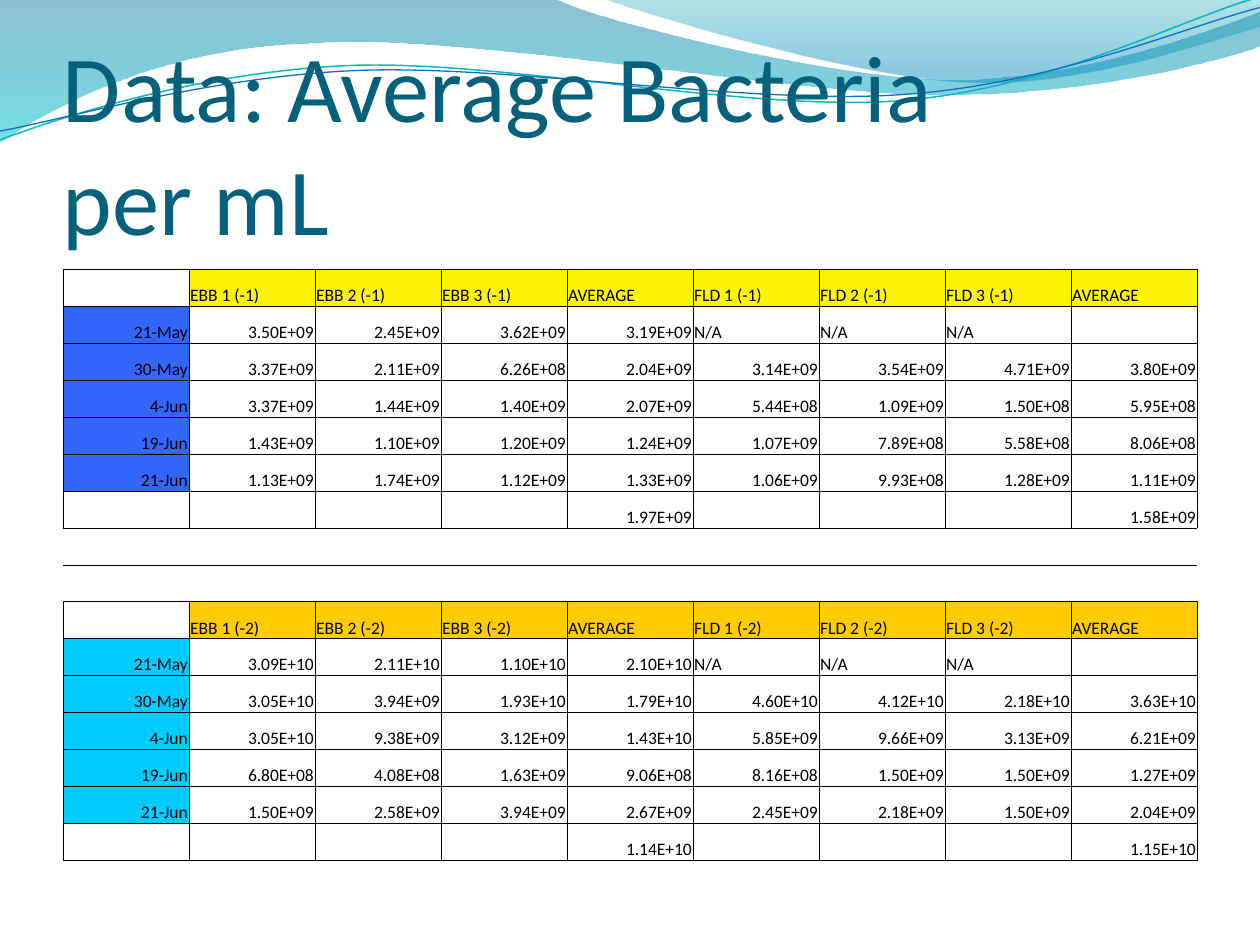
from math import cos, radians, sin

from lxml import etree
from pptx import Presentation
from pptx.dml.color import RGBColor
from pptx.enum.text import MSO_ANCHOR, PP_ALIGN
from pptx.oxml.ns import qn
from pptx.util import Inches, Pt

LEFT, RIGHT = PP_ALIGN.LEFT, PP_ALIGN.RIGHT
LOW = MSO_ANCHOR.BOTTOM
FONT = "Calibri"
PLAIN = "{2D5ABB26-0587-4C30-8999-92F81FD0307C}"
WIDE, HIGH = 10, 7.5
TILT = 2.7

HUES = {
    "title": "04617B", "ink": "000000",
    "sea": "0074A1", "aqua": "00C6CF", "teal": "00A1A9", "sky": "008BBF",
    "cyan": "0AB8BF", "blue": "0F6FC6",
}

TITLE = "Data: Average Bacteria per mL"
DATES = ["21-May", "30-May", "4-Jun", "19-Jun", "21-Jun"]
SITES = ["EBB", "FLD"]

BLOCKS = [
    {"tag": "(-1)", "head": "FCF305", "side": "3366FF", "rows": [
        "3.50E+09 2.45E+09 3.62E+09 3.19E+09 N/A N/A N/A",
        "3.37E+09 2.11E+09 6.26E+08 2.04E+09 3.14E+09 3.54E+09 4.71E+09 3.80E+09",
        "3.37E+09 1.44E+09 1.40E+09 2.07E+09 5.44E+08 1.09E+09 1.50E+08 5.95E+08",
        "1.43E+09 1.10E+09 1.20E+09 1.24E+09 1.07E+09 7.89E+08 5.58E+08 8.06E+08",
        "1.13E+09 1.74E+09 1.12E+09 1.33E+09 1.06E+09 9.93E+08 1.28E+09 1.11E+09",
    ], "means": ["1.97E+09", "1.58E+09"]},
    {"tag": "(-2)", "head": "FFCC00", "side": "00CCFF", "rows": [
        "3.09E+10 2.11E+10 1.10E+10 2.10E+10 N/A N/A N/A",
        "3.05E+10 3.94E+09 1.93E+10 1.79E+10 4.60E+10 4.12E+10 2.18E+10 3.63E+10",
        "3.05E+10 9.38E+09 3.12E+09 1.43E+10 5.85E+09 9.66E+09 3.13E+09 6.21E+09",
        "6.80E+08 4.08E+08 1.63E+09 9.06E+08 8.16E+08 1.50E+09 1.50E+09 1.27E+09",
        "1.50E+09 2.58E+09 3.94E+09 2.67E+09 2.45E+09 2.18E+09 1.50E+09 2.04E+09",
    ], "means": ["1.14E+10", "1.15E+10"]},
]

WAVES = [
    {"path": [(0, 0), (4.4, -0.01), (4.76, 0.17, 6.64, 0.63, 7.58, 0.63),
              (8.53, 0.63, 9.58, 0.26, 10, 0.09), (10.01, 0.36),
              (9.83, 0.44, 8.7, 0.76, 7.46, 0.75),
              (6.22, 0.75, 3.82, 0.28, 2.57, 0.34),
              (1.29, 0.36, 0.46, 0.83, -0.01, 1.13), (0, 0)],
     "fill": [(0, "sea", 45), (1, "aqua", 55)]},
    {"path": [(4.79, -0.01), (5.09, 0.11, 6.82, 0.62, 7.69, 0.65),
              (8.56, 0.69, 9.61, 0.32, 10, 0.21), (10, 0), (4.79, -0.01)],
     "fill": [(0, "teal", 30), (0.8, "sky", 45)]},
    {"path": [(0, 1.11), (0.48, 0.93, 1.58, 0.57, 2.77, 0.52),
              (3.95, 0.47, 5.93, 0.89, 7.13, 0.8),
              (8.33, 0.71, 9.38, 0.15, 9.98, -0.02)],
     "line": ("cyan", 0.85), "hub": (4.99, 0.58)},
    {"path": [(0, 1.04), (0.47, 0.96, 1.64, 0.61, 2.83, 0.56),
              (4.03, 0.51, 5.97, 0.84, 7.17, 0.75),
              (8.36, 0.67, 9.41, 0.21, 10, 0.06)],
     "line": ("blue", 0.75), "hub": (5, 0.59)},
]


def rgb(hue):
    return RGBColor.from_string(HUES.get(hue, hue))


def level(spot, hub):
    dx, dy = spot[0] - hub[0], spot[1] - hub[1]
    c, s = cos(radians(TILT)), sin(radians(TILT))
    return hub[0] + dx * c - dy * s, hub[1] + dx * s + dy * c


def bend(wave, path):
    lines = list(wave.element.iter(qn("a:lnTo")))
    for part in path[1:]:
        group, lines = lines[:len(part) // 2], lines[len(part) // 2:]
        if len(group) == 3:
            curve = etree.Element(qn("a:cubicBezTo"))
            group[0].addprevious(curve)
            for line in group:
                curve.append(line[0])
                line.getparent().remove(line)


def draw(slide, path, fill=None, line=None, hub=None):
    spots = [part[i:i + 2] for part in path for i in range(0, len(part), 2)]
    if hub:
        spots = [level(spot, hub) for spot in spots]
    spots = [(Inches(x), Inches(y)) for x, y in spots]
    pen = slide.shapes.build_freeform(*spots[0])
    pen.add_line_segments(spots[1:], close=fill is not None)
    wave = pen.convert_to_shape()
    bend(wave, path)
    wave.shadow.inherit = False
    if line:
        wave.rotation = 360 - TILT
        wave.fill.background()
        wave.line.color.rgb = rgb(line[0])
        wave.line.width = Pt(line[1])
        return
    wave.line.fill.background()
    wave.fill.gradient()
    wave.fill.gradient_angle = 270
    for stop, (spot, hue, _) in zip(wave.fill.gradient_stops, fill):
        stop.position = spot
        stop.color.rgb = rgb(hue)
    for node, (_, _, share) in zip(wave.element.iter(qn("a:srgbClr")), fill):
        etree.SubElement(node, qn("a:alpha"), val=str(share * 1000))


def put(host, frame, text, size=10, hue="ink", align=LEFT, pads=(0, 0, 0, 0)):
    host.margin_left, host.margin_top, host.margin_right, host.margin_bottom = map(Inches, pads)
    host.vertical_anchor = LOW
    para = frame.paragraphs[0]
    para.alignment = align
    if not text:
        etree.SubElement(para._p, qn("a:endParaRPr"), sz=str(size * 100))
        return
    run = para.add_run()
    run.text = text
    run.font.name = FONT
    run.font.size = Pt(size)
    run.font.color.rgb = rgb(hue)


def edge(cell, sides):
    props = cell._tc.get_or_add_tcPr()
    for spot, side in enumerate(sides):
        line = etree.Element(qn("a:ln" + side), w=str(Pt(0.5)))
        fill = etree.SubElement(line, qn("a:solidFill"))
        etree.SubElement(fill, qn("a:srgbClr"), val=HUES["ink"])
        props.insert(spot, line)


def expand(block):
    head = [""]
    for site in SITES:
        head += [f"{site} {n} {block['tag']}" for n in (1, 2, 3)] + ["AVERAGE"]
    body = [[date] + row.split() for date, row in zip(DATES, block["rows"])]
    foot = [""] * 4 + [block["means"][0]] + [""] * 3 + [block["means"][1]]
    rows = []
    for r, row in enumerate([head] + body + [foot]):
        row += [""] * (len(head) - len(row))
        rows.append([(text, "LRTB",
                      block["head"] if r == 0 and c else
                      block["side"] if c == 0 and 0 < r <= len(DATES) else None)
                     for c, text in enumerate(row)])
    return rows


def main():
    deck = Presentation()
    deck.slide_width, deck.slide_height = Inches(WIDE), Inches(HIGH)
    slide = deck.slides.add_slide(deck.slide_layouts[6])
    for wave in WAVES:
        draw(slide, **wave)

    side = WIDE * 0.05
    span = WIDE - 2 * side
    box = slide.shapes.add_textbox(*map(Inches, (side, 0.77, span, 1.25)))
    box.text_frame.word_wrap = True
    put(box.text_frame, box.text_frame, TITLE, size=54, hue="title", pads=(0, 0.05, 1.5, 0))

    first, last = map(expand, BLOCKS)
    gap = [[("", rim, None)] * len(first[0]) for rim in "TB"]
    grid = first + gap + last
    spot = map(Inches, (side, 2.14, span, 4.69))
    table = slide.shapes.add_table(len(grid), len(grid[0]), *spot).table
    table.first_row = table.horz_banding = False
    next(table._tbl.iter(qn("a:tableStyleId"))).text = PLAIN
    for r, row in enumerate(grid):
        for c, (text, rims, hue) in enumerate(row):
            cell = table.cell(r, c)
            put(cell, cell.text_frame, text, align=RIGHT if text[:1].isdigit() else LEFT,
                pads=(0.01, 0.01, 0.01, 0))
            if hue:
                cell.fill.solid()
                cell.fill.fore_color.rgb = rgb(hue)
            else:
                cell.fill.background()
            edge(cell, rims)
    deck.save("out.pptx")


if __name__ == "__main__":
    main()
